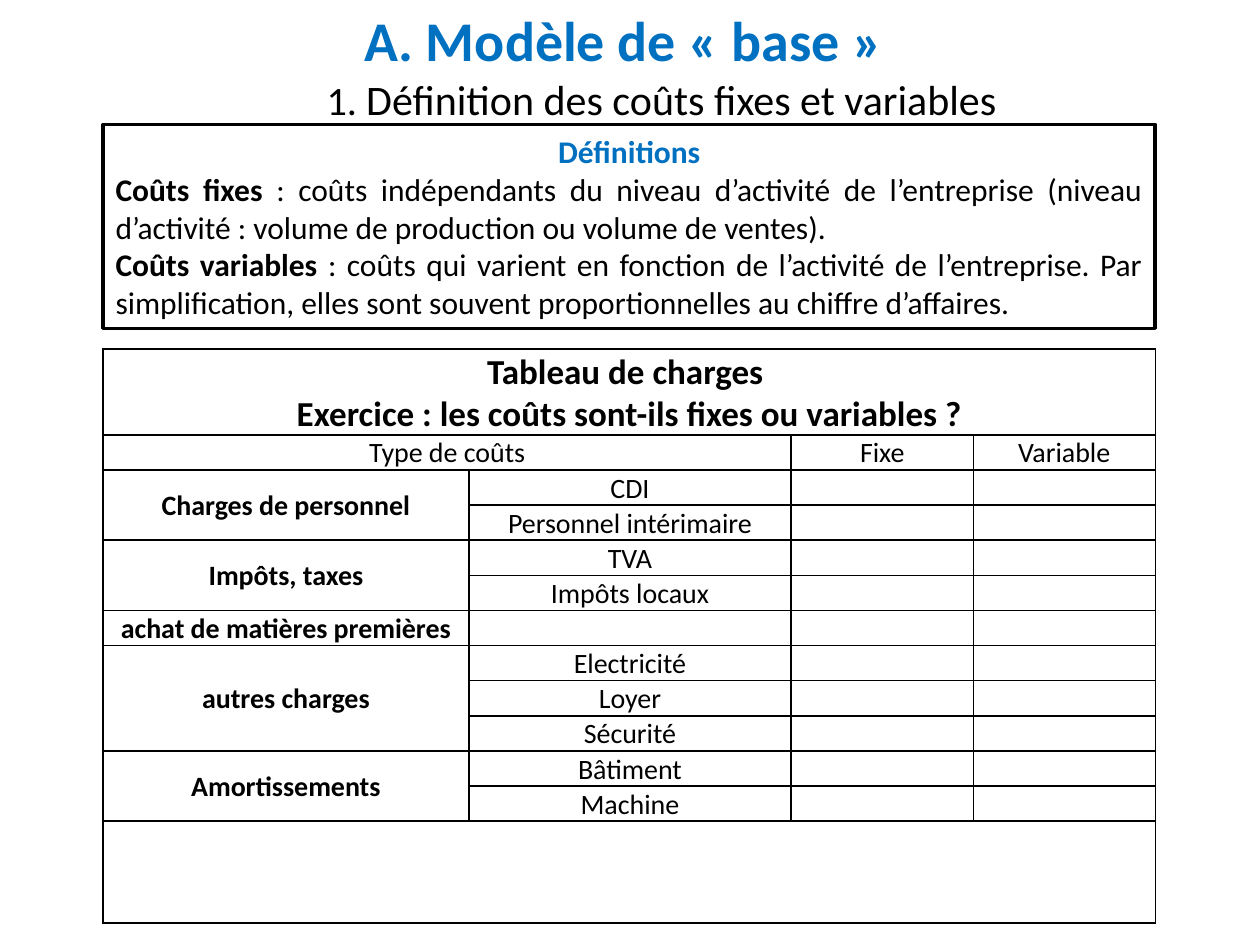
from lxml.etree import SubElement
from pptx import Presentation
from pptx.dml.color import RGBColor
from pptx.enum.shapes import MSO_SHAPE as Shape
from pptx.enum.text import MSO_ANCHOR as Anchor, MSO_AUTO_SIZE as AutoSize, PP_ALIGN as Align
from pptx.oxml.ns import qn
from pptx.util import Cm, Pt

BLACK = RGBColor(0x00, 0x00, 0x00)
WHITE = RGBColor(0xFF, 0xFF, 0xFF)
BLUE = RGBColor(0x00, 0x70, 0xC0)
FONT = "Calibri"

LEFT, WIDTH = Cm(2.08), Cm(21.21)
COLUMN_WIDTHS = [Cm(7.37), Cm(6.5), Cm(3.67), Cm(3.67)]
HEADING_HEIGHT, ROW_HEIGHT, FOOTER_HEIGHT = Cm(1.71), Cm(0.69), Cm(2.05)

HEADING = ["Tableau de charges ", "Exercice : les coûts sont-ils fixes ou variables ?"]
# Each category with its costs; an empty name keeps a blank cell
CHARGES = [
    ("Charges de personnel", ["CDI", "Personnel intérimaire"]),
    ("Impôts, taxes", ["TVA", "Impôts locaux"]),
    ("achat de matières premières", [""]),
    ("autres charges", ["Electricité", "Loyer", "Sécurité"]),
    ("Amortissements", ["Bâtiment", "Machine"]),
]
DEFINITIONS = [
    ("Coûts fixes ", ": coûts indépendants du niveau d’activité de l’entreprise "
     "(niveau d’activité : volume de production ou volume de ventes)."),
    ("Coûts variables ", ": coûts qui varient en fonction de l’activité de l’entreprise. "
     "Par simplification, elles sont souvent proportionnelles au chiffre d’affaires."),
]


def add_run(paragraph, text, size, bold=False, color=BLACK):
    run = paragraph.add_run()
    run.text = text
    run.font.name, run.font.size = FONT, Pt(size)
    run.font.bold, run.font.color.rgb = bold, color


def next_paragraph(frame, first, align):
    paragraph = frame.paragraphs[0] if first else frame.add_paragraph()
    paragraph.alignment = align
    return paragraph


def fill_title(title):
    title.left, title.top, title.width, title.height = Cm(1.27), Cm(-0.08), Cm(22.86), Cm(3.18)
    frame = title.text_frame
    frame.auto_size, frame.vertical_anchor = AutoSize.NONE, Anchor.TOP
    frame.margin_top = Cm(0.2)
    line = next_paragraph(frame, True, Align.CENTER)
    # Hanging indent shifts the second line to the right
    properties = line._p.get_or_add_pPr()
    properties.set("marL", str(Cm(1.27)))
    properties.set("indent", str(-Cm(1.27)))
    add_run(line, "A. Modèle de « base » ", 32, True, BLUE)
    line.add_line_break()
    add_run(line, "1. ", 23)
    add_run(line, "Définition des coûts fixes et variables", 24)


def add_definitions(slide):
    box = slide.shapes.add_shape(Shape.RECTANGLE, LEFT, Cm(2.51), WIDTH, Cm(4.11))
    box.shadow.inherit = False
    box.fill.solid()
    box.fill.fore_color.rgb = WHITE
    box.line.color.rgb, box.line.width = BLACK, Pt(2)
    frame = box.text_frame
    frame.word_wrap, frame.auto_size = True, AutoSize.SHAPE_TO_FIT_TEXT
    add_run(next_paragraph(frame, True, Align.CENTER), "Définitions", 18, True, BLUE)
    for term, meaning in DEFINITIONS:
        paragraph = next_paragraph(frame, False, Align.JUSTIFY)
        add_run(paragraph, term, 18, True)
        add_run(paragraph, meaning, 18)


def format_cell(cell):
    cell.fill.background()
    cell.vertical_anchor = Anchor.MIDDLE
    cell.margin_left = cell.margin_right = cell.margin_top = Cm(0.03)
    cell.margin_bottom = 0
    # Small end mark keeps blank rows from growing
    SubElement(cell.text_frame.paragraphs[0]._p, qn("a:endParaRPr")).set("sz", "1200")
    properties = cell._tc.get_or_add_tcPr()
    for position, side in enumerate(("a:lnL", "a:lnR", "a:lnT", "a:lnB")):
        border = properties.makeelement(qn(side), {"w": str(Pt(1))})
        properties.insert(position, border)
        paint = SubElement(border, qn("a:solidFill"))
        SubElement(paint, qn("a:srgbClr")).set("val", str(BLACK))


def write_cell(cell, lines, size=16, bold=False):
    for index, text in enumerate(lines):
        paragraph = next_paragraph(cell.text_frame, index == 0, Align.CENTER)
        if text:
            add_run(paragraph, text, size, bold)


def add_charges(slide):
    cost_count = sum(len(costs) for _, costs in CHARGES)
    heights = [HEADING_HEIGHT] + [ROW_HEIGHT] * (cost_count + 1) + [FOOTER_HEIGHT]
    table = slide.shapes.add_table(len(heights), len(COLUMN_WIDTHS), LEFT, Cm(7.04),
                                   WIDTH, sum(heights)).table
    table.first_row = table.horz_banding = False
    for column, width in zip(table.columns, COLUMN_WIDTHS):
        column.width = width
    for row, height in zip(table.rows, heights):
        row.height = height
    for cell in table.iter_cells():
        format_cell(cell)

    # Heading, column names and closing blank row
    last = len(heights) - 1
    for row, end in ((0, 3), (1, 1), (last, 3)):
        table.cell(row, 0).merge(table.cell(row, end))
    write_cell(table.cell(0, 0), HEADING, 20, True)
    for column, name in ((0, "Type de coûts"), (2, "Fixe"), (3, "Variable")):
        write_cell(table.cell(1, column), [name])

    # Categories span the rows of their costs
    row = 2
    for category, costs in CHARGES:
        if len(costs) > 1:
            table.cell(row, 0).merge(table.cell(row + len(costs) - 1, 0))
        write_cell(table.cell(row, 0), [category], bold=True)
        for offset, cost in enumerate(costs):
            write_cell(table.cell(row + offset, 1), [cost])
        row += len(costs)


def main():
    deck = Presentation()
    deck.slide_width, deck.slide_height = Cm(25.4), Cm(19.05)
    slide = deck.slides.add_slide(deck.slide_layouts[5])
    fill_title(slide.shapes.title)
    add_definitions(slide)
    add_charges(slide)
    deck.save("out.pptx")


if __name__ == "__main__":
    main()
